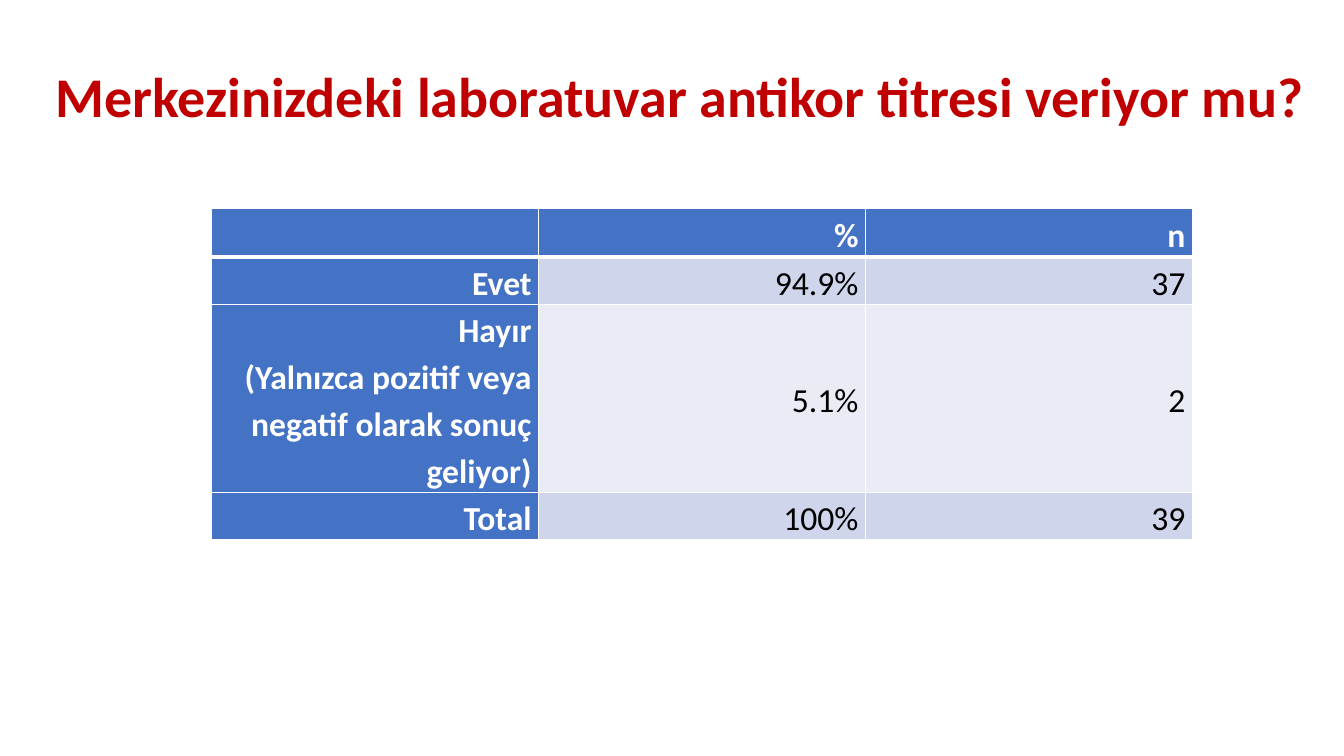
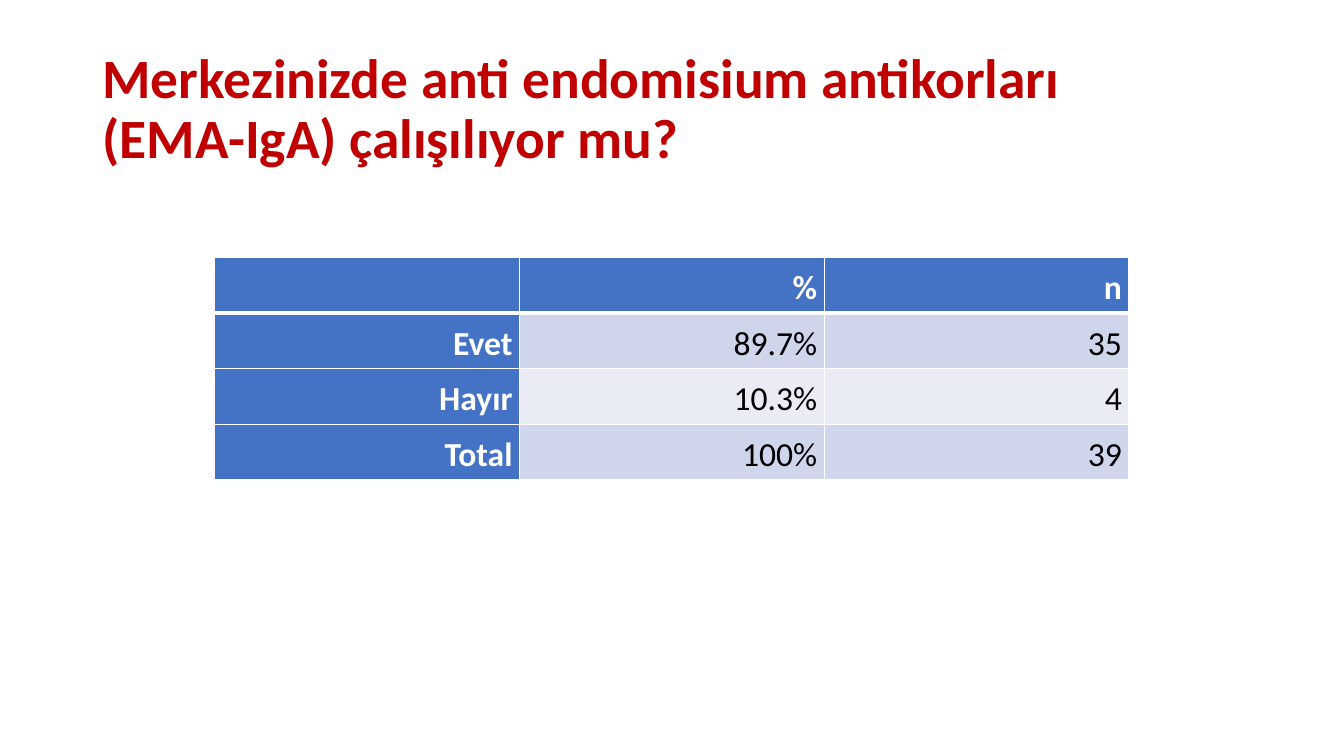
"""Build two survey result slides, each with a title and a table."""
from dataclasses import dataclass

from lxml import etree
from pptx import Presentation
from pptx.dml.color import RGBColor
from pptx.enum.text import MSO_ANCHOR, PP_ALIGN
from pptx.oxml.ns import qn
from pptx.util import Pt

MIDDLE = MSO_ANCHOR.MIDDLE
RIGHT = PP_ALIGN.RIGHT


@dataclass(frozen=True)
class Theme:
    font: str = "Calibri"
    title: str = "C00000"
    head: str = "4472C4"
    bands: tuple = ("CFD5EA", "E9EBF5")
    light: str = "FFFFFF"
    dark: str = "000000"
    title_size: float = 40
    cell_size: float = 24
    title_spacing: float = 0.9
    cell_spacing: float = 1.15
    cell_inset: float = 5
    thin: float = 1
    thick: float = 3


class Deck:
    def __init__(self, theme):
        self.theme = theme
        self.prs = Presentation()
        self.prs.slide_width, self.prs.slide_height = Pt(960), Pt(540)
        self.s = None

    def slide(self):
        self.s = self.prs.slides.add_slide(self.prs.slide_layouts[6])

    def run(self, p, text, size, color, bold):
        r = p.add_run()
        r.text = text
        r.font.name = self.theme.font
        r.font.size = Pt(size)
        r.font.bold = bold
        r.font.color.rgb = RGBColor.from_string(color)

    def title(self, lines, left, top, width, size):
        t = self.theme
        sp = self.s.shapes.add_textbox(Pt(left), Pt(top), Pt(width), Pt(104.4))
        tf = sp.text_frame
        tf.word_wrap = True
        tf.vertical_anchor = MIDDLE
        p = tf.paragraphs[0]
        p.line_spacing = t.title_spacing
        for i, line in enumerate(lines):
            if i:
                p.add_line_break()
            self.run(p, line, size, t.title, True)

    def border(self, cell, side, width):
        tcPr = cell._tc.get_or_add_tcPr()
        ln = etree.SubElement(tcPr, qn(f"a:ln{side}"), w=str(Pt(width)))
        fill = etree.SubElement(ln, qn("a:solidFill"))
        etree.SubElement(fill, qn("a:srgbClr"), val=self.theme.light)

    def cell(self, cell, text, row, col):
        t = self.theme
        label = row == 0 or col == 0
        cell.vertical_anchor = MIDDLE
        cell.margin_left = cell.margin_right = Pt(t.cell_inset)
        cell.margin_top = cell.margin_bottom = 0
        thick_side = {0: "B", 1: "T"}.get(row)
        for side in "LRTB":
            self.border(cell, side, t.thick if side == thick_side else t.thin)
        cell.fill.solid()
        color = t.head if label else t.bands[(row - 1) % 2]
        cell.fill.fore_color.rgb = RGBColor.from_string(color)
        tf = cell.text_frame
        for i, line in enumerate(text.split("\n") if text else []):
            p = tf.add_paragraph() if i else tf.paragraphs[0]
            p.alignment = RIGHT
            p.line_spacing = t.cell_spacing
            self.run(p, line, t.cell_size, t.light if label else t.dark, label)

    def table(self, rows, left, top, width, heights):
        n = len(rows[0])
        sp = self.s.shapes.add_table(len(rows), n, Pt(left), Pt(top),
                                     Pt(width), Pt(sum(heights)))
        tbl = sp.table
        for col in tbl.columns:
            col.width = Pt(width / n)
        for i, (values, height) in enumerate(zip(rows, heights)):
            tbl.rows[i].height = Pt(height)
            for j, text in enumerate(values):
                self.cell(tbl.cell(i, j), text, i, j)


def main():
    theme = Theme()
    deck = Deck(theme)
    header = ("", "%", "n")
    total = ("Total", "100%", "39")

    deck.slide()
    deck.title(["Merkezinizdeki laboratuvar antikor titresi veriyor mu?"],
               32.4, 19, 927, theme.title_size)
    no = "Hayır\n(Yalnızca pozitif veya negatif olarak sonuç geliyor)"
    deck.table([header, ("Evet", "94.9%", "37"), (no, "5.1%", "2"), total],
               151.2, 149, 700.5, [34.6, 33.7, 134.6, 33.7])

    deck.slide()
    deck.title(["Merkezinizde anti endomisium antikorları",
                "(EMA-IgA) çalışılıyor mu?"],
               66.2, 27, 828, theme.title_size * 0.99)
    deck.table([header, ("Evet", "89.7%", "35"), ("Hayır", "10.3%", "4"), total],
               153.4, 183.6, 653, [39.8] * 4)

    deck.prs.save("out.pptx")


if __name__ == "__main__":
    main()
